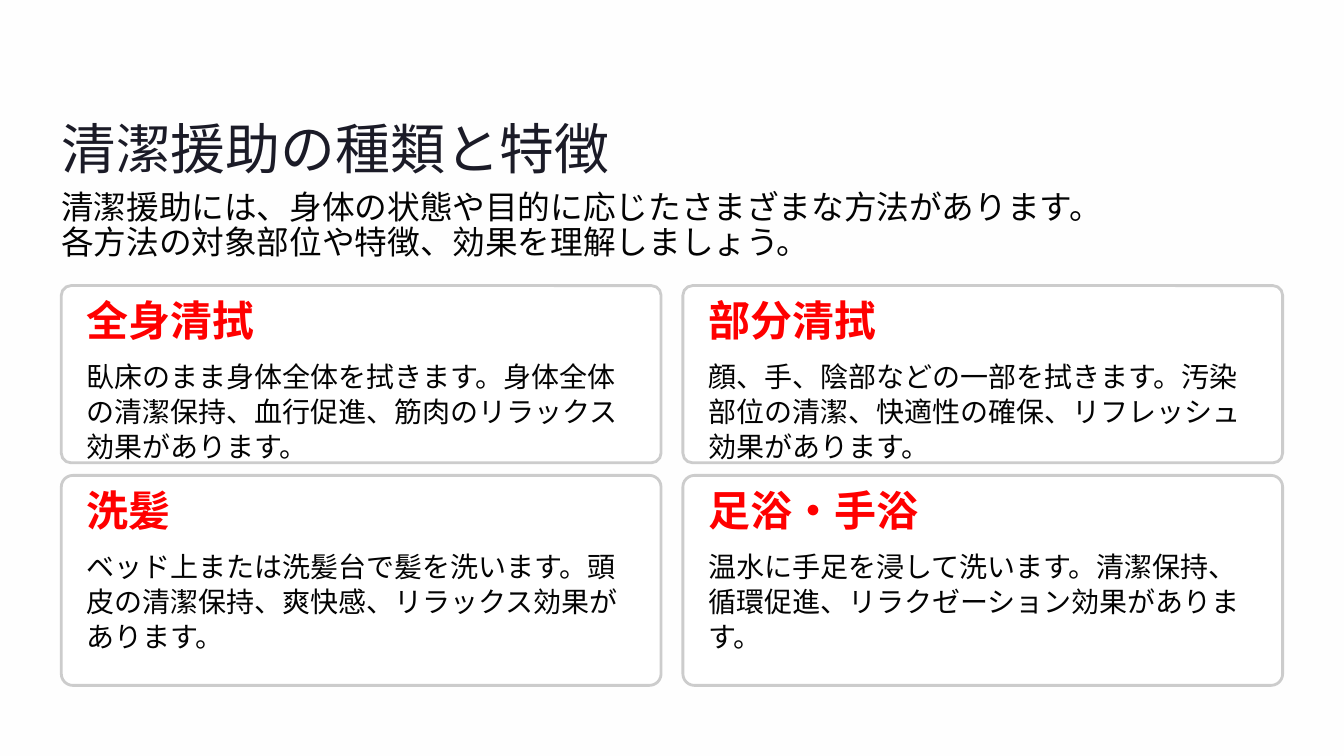
from dataclasses import dataclass

from pptx import Presentation
from pptx.dml.color import RGBColor
from pptx.enum import shapes, text
from pptx.util import Inches, Pt


@dataclass(frozen=True)
class Theme:
    background: str = "FEFEFE"
    card: str = "FFFFFF"
    border: str = "CCCCCC"
    title: str = "1B1B27"
    heading: str = "FF0000"
    body: str = "030303"
    heading_font: str = "Inter"
    body_font: str = "Cabin"
    title_size: float = 47
    intro_size: float = 28
    heading_size: float = 36
    body_size: float = 24


theme = Theme()

presentation = Presentation()
presentation.slide_width = Inches(16)
presentation.slide_height = Inches(9)
slide = presentation.slides.add_slide(presentation.slide_layouts[6])
slide.background.fill.solid()
slide.background.fill.fore_color.rgb = RGBColor.from_string(theme.background)


def add_text(lines, left, top, width, height, font, size, color, spacing,
             bold=False, wrap=False):
    box = slide.shapes.add_textbox(
        Inches(left), Inches(top), Inches(width), Inches(height))
    frame = box.text_frame
    frame.word_wrap = wrap
    frame.vertical_anchor = text.MSO_ANCHOR.TOP
    frame.margin_left = frame.margin_right = 0
    frame.margin_top = frame.margin_bottom = 0
    for index, line in enumerate(lines):
        paragraph = frame.add_paragraph() if index else frame.paragraphs[0]
        paragraph.alignment = text.PP_ALIGN.LEFT
        paragraph.line_spacing = Pt(spacing)
        run = paragraph.add_run()
        run.text = line
        run.font.name = font
        run.font.size = Pt(size)
        run.font.bold = bold
        run.font.color.rgb = RGBColor.from_string(color)


# Title and introduction
margin = 0.73
add_text(["清潔援助の種類と特徴"], margin, 1.34, 6.55, 0.82,
         theme.heading_font, theme.title_size, theme.title, 58.5)
add_text(["清潔援助には、身体の状態や目的に応じたさまざまな方法があります。",
          "各方法の対象部位や特徴、効果を理解しましょう。"],
         margin, 2.27, 14.53, 0.42,
         theme.body_font, theme.intro_size, theme.body, 30)

# Two by two grid of care methods
methods = [
    ("全身清拭", "臥床のまま身体全体を拭きます。身体全体の清潔保持、血行促進、筋肉のリラックス効果があります。"),
    ("部分清拭", "顔、手、陰部などの一部を拭きます。汚染部位の清潔、快適性の確保、リフレッシュ効果があります。"),
    ("洗髪", "ベッド上または洗髪台で髪を洗います。頭皮の清潔保持、爽快感、リラックス効果があります。"),
    ("足浴・手浴", "温水に手足を浸して洗います。清潔保持、循環促進、リラクゼーション効果があります。"),
]
card_width, column_gap, padding = 7.14, 0.26, 0.3
rows = [(3.4, 2.11), (5.66, 2.5)]  # top and height of each row

for index, (heading, description) in enumerate(methods):
    row, column = divmod(index, 2)
    left = margin + column * (card_width + column_gap)
    top, height = rows[row]

    card = slide.shapes.add_shape(
        shapes.MSO_SHAPE.ROUNDED_RECTANGLE,
        Inches(left), Inches(top), Inches(card_width), Inches(height))
    card.adjustments[0] = 0.055
    card.shadow.inherit = False
    card.fill.solid()
    card.fill.fore_color.rgb = RGBColor.from_string(theme.card)
    card.line.color.rgb = RGBColor.from_string(theme.border)
    card.line.width = Pt(2.4)

    add_text([heading], left + padding, top + padding, 3.28, 0.41,
             theme.heading_font, theme.heading_size, theme.heading, 29, bold=True)
    add_text([description], left + padding, top + 0.86,
             card_width - 2 * padding, 0.84,
             theme.body_font, theme.body_size, theme.body, 30, wrap=True)

presentation.save("out.pptx")
